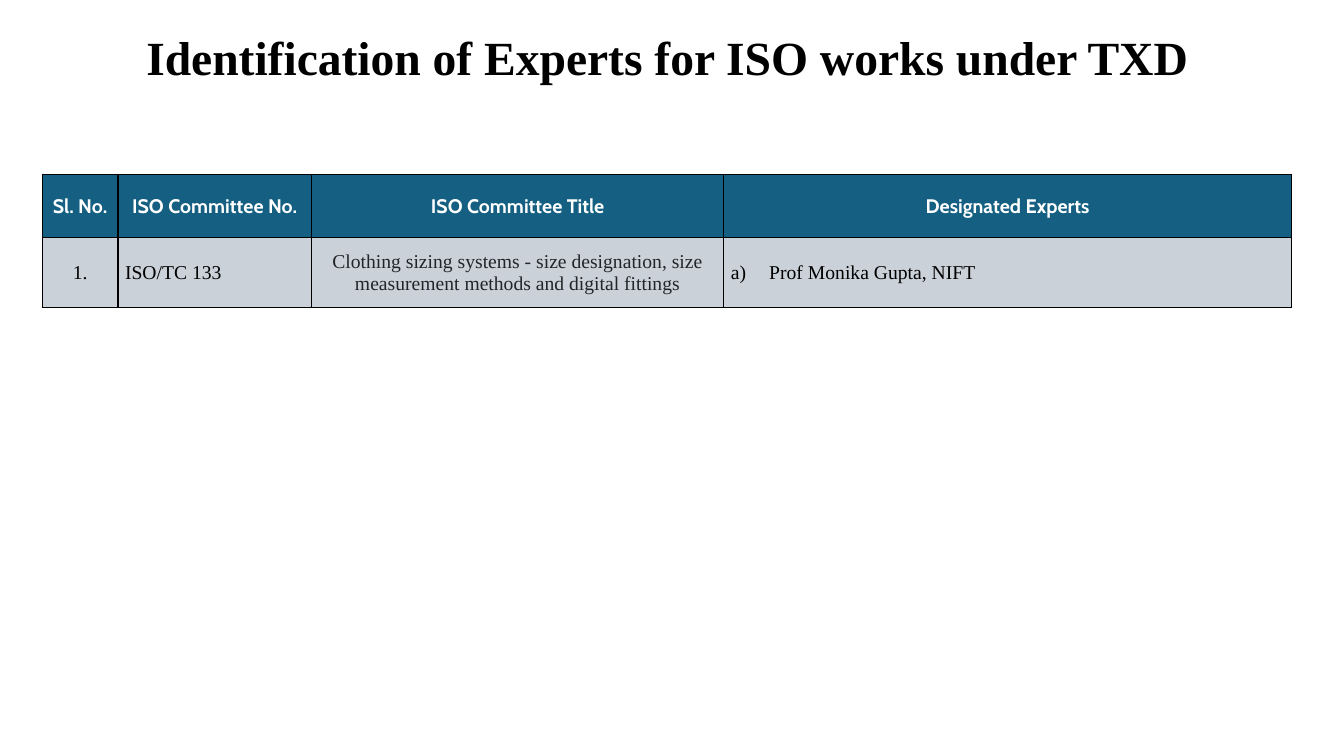
import pptx
import pptx.dml.color
import pptx.enum.text
import pptx.oxml
import pptx.oxml.ns
import pptx.util
from lxml import etree

Inches = pptx.util.Inches
Pt = pptx.util.Pt
RGBColor = pptx.dml.color.RGBColor
PP_ALIGN = pptx.enum.text.PP_ALIGN
MSO_ANCHOR = pptx.enum.text.MSO_ANCHOR
qn = pptx.oxml.ns.qn

BLACK = RGBColor(0x00, 0x00, 0x00)
WHITE = RGBColor(0xFF, 0xFF, 0xFF)
HEADER_BLUE = RGBColor(0x15, 0x60, 0x82)
ROW_GREY = RGBColor(0xCA, 0xD1, 0xD8)
DARK_GREY = RGBColor(0x21, 0x25, 0x29)


class SlideBuilder:
    body_font = "Times New Roman"
    header_font = "Cabin"

    def __init__(self, slide):
        self.slide = slide

    def style(self, p, size, font, color, bold=False, align=PP_ALIGN.CENTER):
        p.alignment = align
        p.font.size = Pt(size)
        p.font.name = font
        p.font.bold = bold
        p.font.color.rgb = color

    def title(self, text, left, top, width, height):
        sp = self.slide.shapes.add_textbox(
            Inches(left), Inches(top), Inches(width), Inches(height))
        tf = sp.text_frame
        tf.word_wrap = True
        p = tf.paragraphs[0]
        p.text = text
        self.style(p, 34, self.body_font, BLACK, bold=True)

    def table(self, rows, left, top, widths, heights):
        frame = self.slide.shapes.add_table(
            len(rows), len(widths), Inches(left), Inches(top),
            Inches(sum(widths)), Inches(sum(heights)))
        table = frame.table
        for column, width in zip(table.columns, widths):
            column.width = Inches(width)
        for i, (texts, height) in enumerate(zip(rows, heights)):
            table.rows[i].height = Inches(height)
            for j, text in enumerate(texts):
                self.cell(table.cell(i, j), text, header=i == 0)
        return table

    def cell(self, cell, text, header):
        cell.vertical_anchor = MSO_ANCHOR.MIDDLE
        cell.margin_left = cell.margin_right = Inches(0.08 if header else 0.07)
        cell.margin_top = cell.margin_bottom = Inches(0.04 if header else 0.03)
        self.borders(cell)
        cell.fill.solid()
        cell.fill.fore_color.rgb = HEADER_BLUE if header else ROW_GREY
        p = cell.text_frame.paragraphs[0]
        p.text = text
        if header:
            self.style(p, 14, self.header_font, WHITE, bold=True)
        else:
            self.style(p, 14, self.body_font, BLACK)

    def borders(self, cell):
        tcPr = cell._tc.get_or_add_tcPr()
        for side in ("a:lnL", "a:lnR", "a:lnT", "a:lnB"):
            ln = etree.SubElement(tcPr, qn(side), w=str(Pt(1)))
            fill = etree.SubElement(ln, qn("a:solidFill"))
            etree.SubElement(fill, qn("a:srgbClr"), val=str(BLACK))

    def letter_list(self, p, indent):
        pPr = p._p.get_or_add_pPr()
        pPr.set("marL", str(Inches(indent)))
        pPr.set("indent", str(-Inches(indent)))
        bullet = pptx.oxml.parse_xml(
            '<a:buAutoNum xmlns:a="http://schemas.openxmlformats.org/'
            'drawingml/2006/main" type="alphaLcParenR"/>')
        pPr.insert(0, bullet)


def main():
    prs = pptx.Presentation()
    prs.slide_width = Inches(13.33)
    prs.slide_height = Inches(7.5)
    s = SlideBuilder(prs.slides.add_slide(prs.slide_layouts[6]))

    # Title
    s.title("Identification of Experts for ISO works under TXD",
            0.12, 0.23, 13, 0.67)

    # Committee table
    rows = [
        ("Sl. No.", "ISO Committee No.", "ISO Committee Title",
         "Designated Experts"),
        ("1.", "ISO/TC 133",
         "Clothing sizing systems - size designation, size measurement "
         "methods and digital fittings",
         "Prof Monika Gupta, NIFT"),
    ]
    table = s.table(rows, 0.42, 1.73, (0.75, 1.92, 4.09, 5.63), (0.63, 0.69))

    # Exceptions in the body row
    number, committee, subject, experts = (
        table.cell(1, j).text_frame.paragraphs[0] for j in range(4))
    committee.alignment = experts.alignment = PP_ALIGN.LEFT
    subject.font.color.rgb = DARK_GREY
    subject.space_after = Pt(4)
    s.letter_list(experts, 0.38)

    prs.save("out.pptx")


if __name__ == "__main__":
    main()
